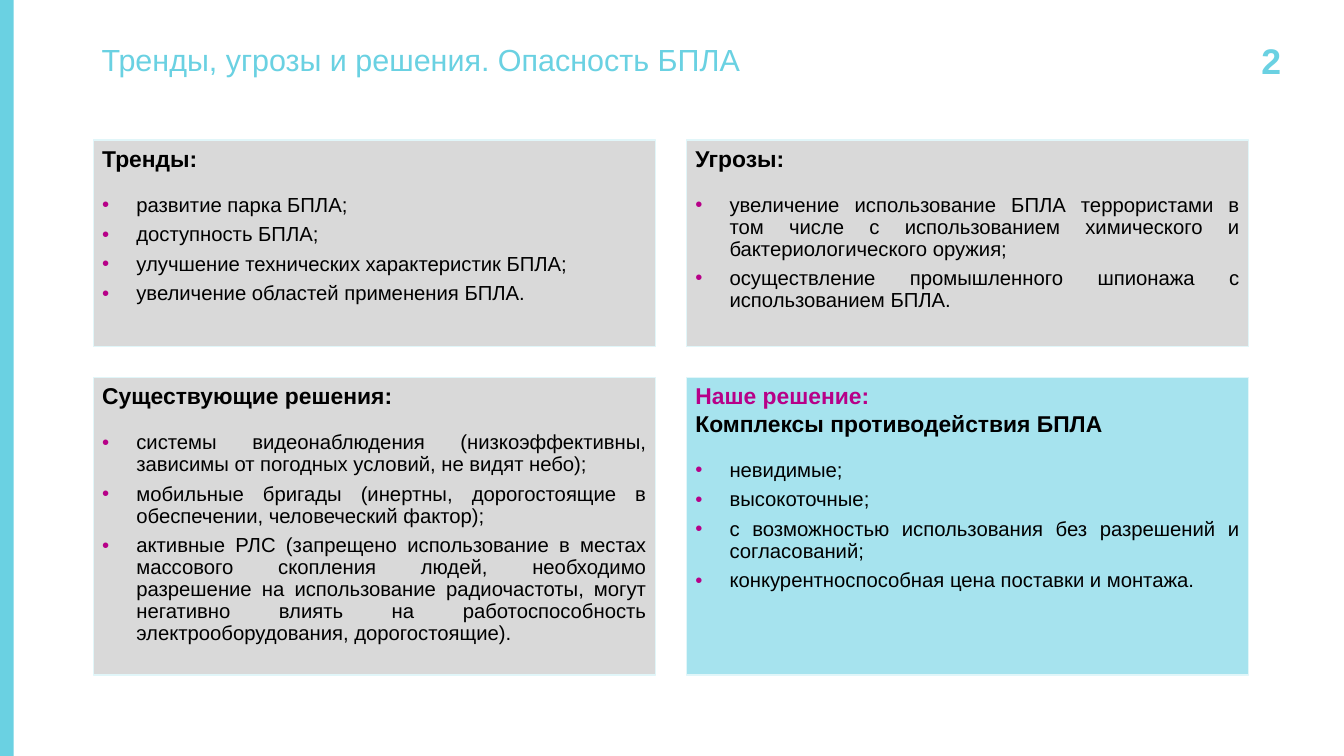
"""Build the slide on drone trends, threats and solutions."""
from dataclasses import dataclass

from lxml.etree import SubElement
from pptx import Presentation
from pptx.dml.color import RGBColor
from pptx.enum.shapes import MSO_SHAPE
from pptx.enum.text import MSO_ANCHOR, MSO_AUTO_SIZE, PP_ALIGN
from pptx.oxml.ns import qn
from pptx.slide import Slide
from pptx.text.text import _Paragraph
from pptx.util import Cm, Pt

FONT = "Arial"
TURQUOISE = RGBColor(0x6A, 0xD1, 0xE2)
LIGHT_TURQUOISE = RGBColor(0xA6, 0xE3, 0xEE)
PALE_TURQUOISE = RGBColor(0xE1, 0xF6, 0xF9)
GRAY = RGBColor(0xD9, 0xD9, 0xD9)
MAGENTA = RGBColor(0xB7, 0x00, 0x88)
BLACK = RGBColor(0, 0, 0)

SLIDE_WIDTH, SLIDE_HEIGHT = Cm(37.34), Cm(21)
GRID_LEFT, COLUMN_PITCH, CARD_WIDTH = Cm(2.59), Cm(16.48), Cm(15.62)
ROW_TOPS = (Cm(3.89), Cm(10.49))
ROW_HEIGHTS = (Cm(5.74), Cm(8.26))
BULLET_INDENT = Cm(0.95)


@dataclass(frozen=True)
class Heading:
    text: str
    color: RGBColor = BLACK


@dataclass(frozen=True)
class Card:
    column: int
    row: int
    headings: tuple[Heading, ...]
    items: tuple[str, ...]
    fill: RGBColor = GRAY
    heading_alignment: PP_ALIGN = PP_ALIGN.JUSTIFY


CARDS = (
    Card(0, 0, (Heading("Тренды: "),), (
        "развитие парка БПЛА;",
        "доступность БПЛА;",
        "улучшение технических характеристик БПЛА;",
        "увеличение областей применения БПЛА.",
    )),
    Card(0, 1, (Heading("Существующие решения:"),), (
        "системы видеонаблюдения (низкоэффективны, зависимы от погодных "
        "условий, не видят небо);",
        "мобильные бригады (инертны, дорогостоящие в обеспечении, "
        "человеческий фактор);",
        "активные РЛС (запрещено использование в местах массового скопления "
        "людей, необходимо разрешение на использование радиочастоты, могут "
        "негативно влиять на работоспособность электрооборудования, "
        "дорогостоящие).",
    )),
    Card(1, 0, (Heading("Угрозы:"),), (
        "увеличение использование БПЛА террористами в том числе с "
        "использованием химического и бактериологического оружия;",
        "осуществление промышленного шпионажа с использованием БПЛА.",
    )),
    Card(1, 1, (
        Heading("Наше решение: ", MAGENTA),
        Heading("Комплексы противодействия БПЛА"),
    ), (
        "невидимые; ",
        "высокоточные; ",
        "с возможностью использования без разрешений и согласований;",
        "конкурентноспособная цена поставки и монтажа.",
    ), LIGHT_TURQUOISE, PP_ALIGN.LEFT),
)


def add_run(paragraph: _Paragraph, text: str, size: int, color: RGBColor,
            bold: bool = False) -> None:
    """Append one formatted run."""
    run = paragraph.add_run()
    run.text = text
    run.font.name = FONT
    run.font.size = Pt(size)
    run.font.bold = bold
    run.font.color.rgb = color


def add_bullet(paragraph: _Paragraph) -> None:
    """Give a paragraph a magenta bullet and a hanging indent."""
    properties = paragraph._p.get_or_add_pPr()
    properties.set("marL", str(BULLET_INDENT))
    properties.set("indent", str(-BULLET_INDENT))
    bullet_color = SubElement(properties, qn("a:buClr"))
    SubElement(bullet_color, qn("a:srgbClr"), val=str(MAGENTA))
    SubElement(properties, qn("a:buFont"), typeface=FONT)
    SubElement(properties, qn("a:buChar"), char="•")


def add_side_bar(slide: Slide) -> None:
    """Draw the bar along the left edge."""
    bar = slide.shapes.add_shape(MSO_SHAPE.RECTANGLE, 0, 0, Cm(0.38), SLIDE_HEIGHT)
    bar.shadow.inherit = False
    bar.fill.solid()
    bar.fill.fore_color.rgb = TURQUOISE
    bar.line.fill.background()


def set_title(slide: Slide, text: str) -> None:
    """Place and format the title placeholder."""
    title = slide.shapes.title
    title.left, title.top, title.width, title.height = (
        Cm(2.57), Cm(1.12), Cm(30.99), Cm(2.29))
    frame = title.text_frame
    frame.word_wrap = True
    frame.auto_size = MSO_AUTO_SIZE.NONE
    frame.vertical_anchor = MSO_ANCHOR.TOP
    paragraph = frame.paragraphs[0]
    paragraph.alignment = PP_ALIGN.LEFT
    paragraph.line_spacing = 0.9
    add_run(paragraph, text, 24, TURQUOISE)


def add_page_number(slide: Slide, number: str) -> None:
    """Write the page number in the top right corner."""
    box = slide.shapes.add_textbox(Cm(33.63), Cm(1.12), Cm(2.21), Cm(1.12))
    frame = box.text_frame
    frame.word_wrap = True
    frame.vertical_anchor = MSO_ANCHOR.MIDDLE
    paragraph = frame.paragraphs[0]
    paragraph.alignment = PP_ALIGN.RIGHT
    add_run(paragraph, number, 28, TURQUOISE, bold=True)


def add_card(slide: Slide, card: Card) -> None:
    """Draw one card with its heading and bulleted items."""
    shape = slide.shapes.add_shape(
        MSO_SHAPE.RECTANGLE, GRID_LEFT + card.column * COLUMN_PITCH,
        ROW_TOPS[card.row], CARD_WIDTH, ROW_HEIGHTS[card.row])
    shape.shadow.inherit = False
    shape.fill.solid()
    shape.fill.fore_color.rgb = card.fill
    shape.line.color.rgb = PALE_TURQUOISE
    shape.line.width = Pt(1)
    frame = shape.text_frame
    frame.word_wrap = True
    frame.vertical_anchor = MSO_ANCHOR.TOP

    paragraph = frame.paragraphs[0]
    paragraph.alignment = card.heading_alignment
    paragraph.space_after = Pt(18)
    for index, heading in enumerate(card.headings):
        if index:
            paragraph.add_line_break()
        add_run(paragraph, heading.text, 18, heading.color, bold=True)

    for item in card.items:
        paragraph = frame.add_paragraph()
        paragraph.alignment = PP_ALIGN.JUSTIFY
        paragraph.line_spacing = 0.9
        paragraph.space_after = Pt(6)
        add_bullet(paragraph)
        add_run(paragraph, item, 16, BLACK)


def main() -> None:
    """Build and save the presentation."""
    presentation = Presentation()
    presentation.slide_width = SLIDE_WIDTH
    presentation.slide_height = SLIDE_HEIGHT
    slide = presentation.slides.add_slide(presentation.slide_layouts[5])
    add_side_bar(slide)
    set_title(slide, "Тренды, угрозы и решения. Опасность БПЛА")
    add_page_number(slide, "2")
    for card in CARDS:
        add_card(slide, card)
    presentation.save("out.pptx")


if __name__ == "__main__":
    main()
